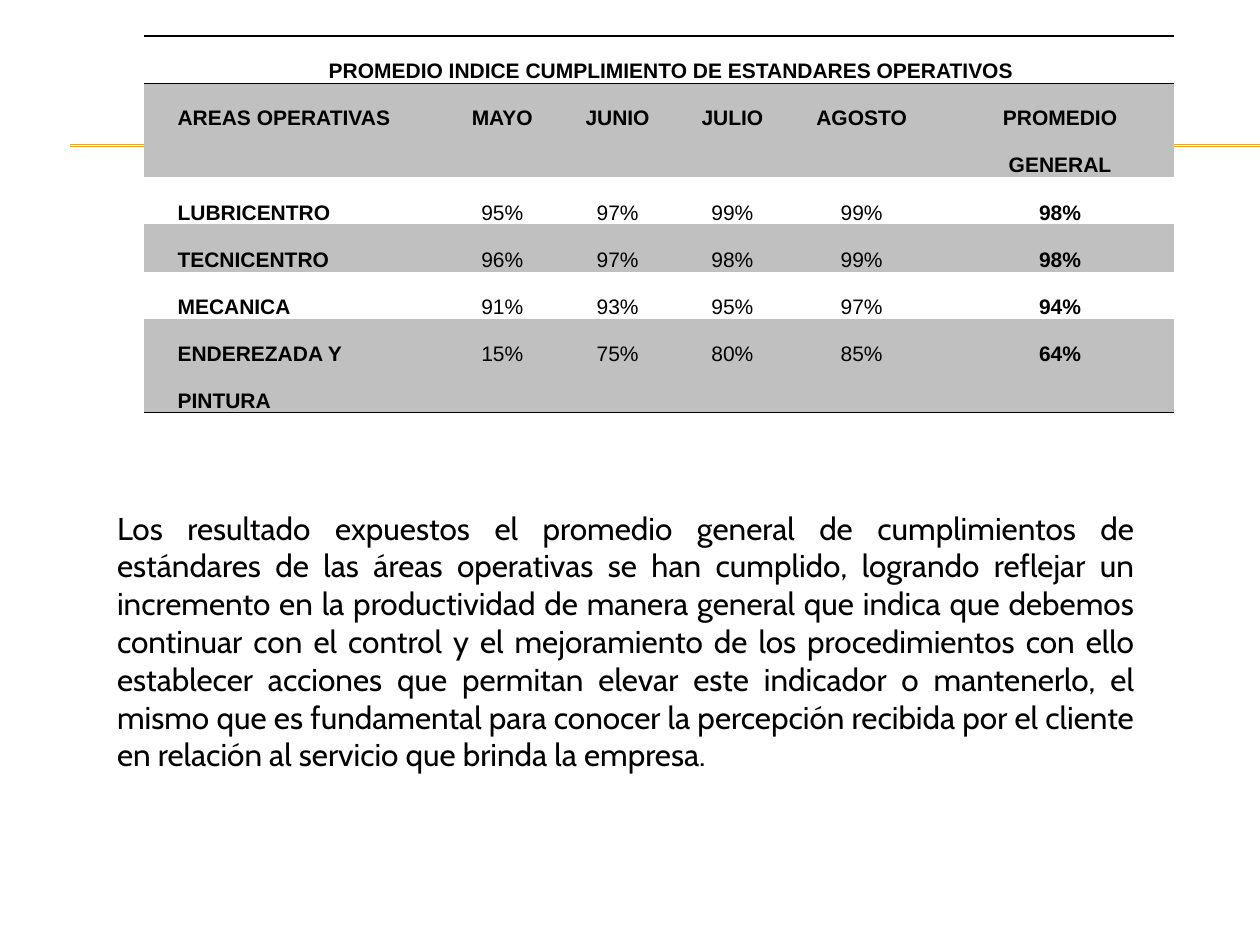
"""Build a slide with the operating standards compliance table and its conclusion."""
from lxml import etree
from pptx import Presentation
from pptx.dml.color import RGBColor
from pptx.enum.shapes import MSO_CONNECTOR
from pptx.enum.text import MSO_AUTO_SIZE, PP_ALIGN
from pptx.oxml.ns import qn
from pptx.util import Cm, Pt

STRAIGHT = MSO_CONNECTOR.STRAIGHT
LEFT, CENTER, JUSTIFY = PP_ALIGN.LEFT, PP_ALIGN.CENTER, PP_ALIGN.JUSTIFY
FIT_SHAPE = MSO_AUTO_SIZE.SHAPE_TO_FIT_TEXT

COLORS = {"text": "000000", "band": "C0C0C0", "rule": "F0A22E"}
TITLE = "PROMEDIO INDICE CUMPLIMIENTO DE ESTANDARES OPERATIVOS"
ROWS = [
    (TITLE, "", "", "", "", ""),
    ("AREAS OPERATIVAS", "MAYO", "JUNIO", "JULIO", "AGOSTO", "PROMEDIO GENERAL"),
    ("LUBRICENTRO", "95%", "97%", "99%", "99%", "98%"),
    ("TECNICENTRO", "96%", "97%", "98%", "99%", "98%"),
    ("MECANICA", "91%", "93%", "95%", "97%", "94%"),
    ("ENDEREZADA Y PINTURA", "15%", "75%", "80%", "85%", "64%"),
]
CONCLUSION = (
    "Los resultado expuestos el promedio general de cumplimientos de estándares de las "
    "áreas operativas se han cumplido, logrando reflejar un incremento en la productividad "
    "de manera general que indica que debemos continuar con el control y el mejoramiento de "
    "los procedimientos con ello establecer acciones que permitan elevar este indicador o "
    "mantenerlo, el mismo que es fundamental para conocer la percepción recibida por el "
    "cliente en relación al servicio que brinda la empresa."
)
COLUMN_WIDTHS = [5.82, 2.31, 2.34, 2.29, 2.92, 5.08]
ROW_HEIGHT = 0.53
TABLE_BOX = (2.9, 0.73, 20.8, 8.13)
CONCLUSION_BOX = (2.11, 10.13, 21.01, 6.4)
RULE_HEIGHTS = [2.92, 2.95]
CELL_FORMAT = {
    "margin_left": Cm(0.18), "margin_right": Cm(0.18), "margin_top": 0, "margin_bottom": 0,
}


def write(paragraph, text, alignment, **font_format):
    paragraph.alignment = alignment
    run = paragraph.add_run()
    run.text = text
    run.font.color.rgb = RGBColor.from_string(COLORS["text"])
    for name, value in font_format.items():
        setattr(run.font, name, value)


def set_borders(cell, ruled_sides):
    properties = cell._tc.get_or_add_tcPr()
    for side in "LRTB":
        border = etree.SubElement(properties, qn(f"a:ln{side}"), w=str(Pt(1)))
        if side in ruled_sides:
            fill = etree.SubElement(border, qn("a:solidFill"))
            etree.SubElement(fill, qn("a:srgbClr"), val=COLORS["text"])
        else:
            etree.SubElement(border, qn("a:noFill"))


def format_cell(cell, text, row, column):
    for name, value in CELL_FORMAT.items():
        setattr(cell, name, value)
    set_borders(cell, {0: "TB", 1: "T", len(ROWS) - 1: "B"}.get(row, ""))
    if row % 2:
        cell.fill.solid()
        cell.fill.fore_color.rgb = RGBColor.from_string(COLORS["band"])
    else:
        cell.fill.background()
    if text:
        paragraph = cell.text_frame.paragraphs[0]
        paragraph.line_spacing = 2.0
        paragraph._p.get_or_add_pPr().set("marL", str(Cm(0.5)))
        edge = column in (0, len(COLUMN_WIDTHS) - 1)
        write(paragraph, text, LEFT if row and column == 0 else CENTER,
              name="Arial", size=Pt(12), bold=row < 2 or edge)


def add_rules(slide, slide_width):
    for height in RULE_HEIGHTS:
        rule = slide.shapes.add_connector(STRAIGHT, Cm(1.42), Cm(height), slide_width, Cm(height))
        rule.line.color.rgb = RGBColor.from_string(COLORS["rule"])
        rule.line.width = Pt(0.75)
        etree.SubElement(rule._element.spPr, qn("a:effectLst"))


def add_compliance_table(slide):
    frame = slide.shapes.add_table(len(ROWS), len(COLUMN_WIDTHS), *map(Cm, TABLE_BOX))
    table = frame.table
    table.first_row = table.horz_banding = False
    for column, width in zip(table.columns, COLUMN_WIDTHS):
        column.width = Cm(width)
    for row in table.rows:
        row.height = Cm(ROW_HEIGHT)
    frame.height = Cm(TABLE_BOX[3])
    table.cell(0, 0).merge(table.cell(0, len(COLUMN_WIDTHS) - 1))
    for row, texts in enumerate(ROWS):
        for column, text in enumerate(texts):
            format_cell(table.cell(row, column), text, row, column)


def add_conclusion(slide):
    text_frame = slide.shapes.add_textbox(*map(Cm, CONCLUSION_BOX)).text_frame
    text_frame.word_wrap = True
    text_frame.auto_size = FIT_SHAPE
    write(text_frame.paragraphs[0], CONCLUSION, JUSTIFY, name="Cabin", size=Pt(18))


def main():
    presentation = Presentation()
    presentation.slide_width, presentation.slide_height = Cm(25.4), Cm(19.05)
    slide = presentation.slides.add_slide(presentation.slide_layouts[6])
    add_rules(slide, presentation.slide_width)
    add_compliance_table(slide)
    add_conclusion(slide)
    presentation.save("out.pptx")


if __name__ == "__main__":
    main()
